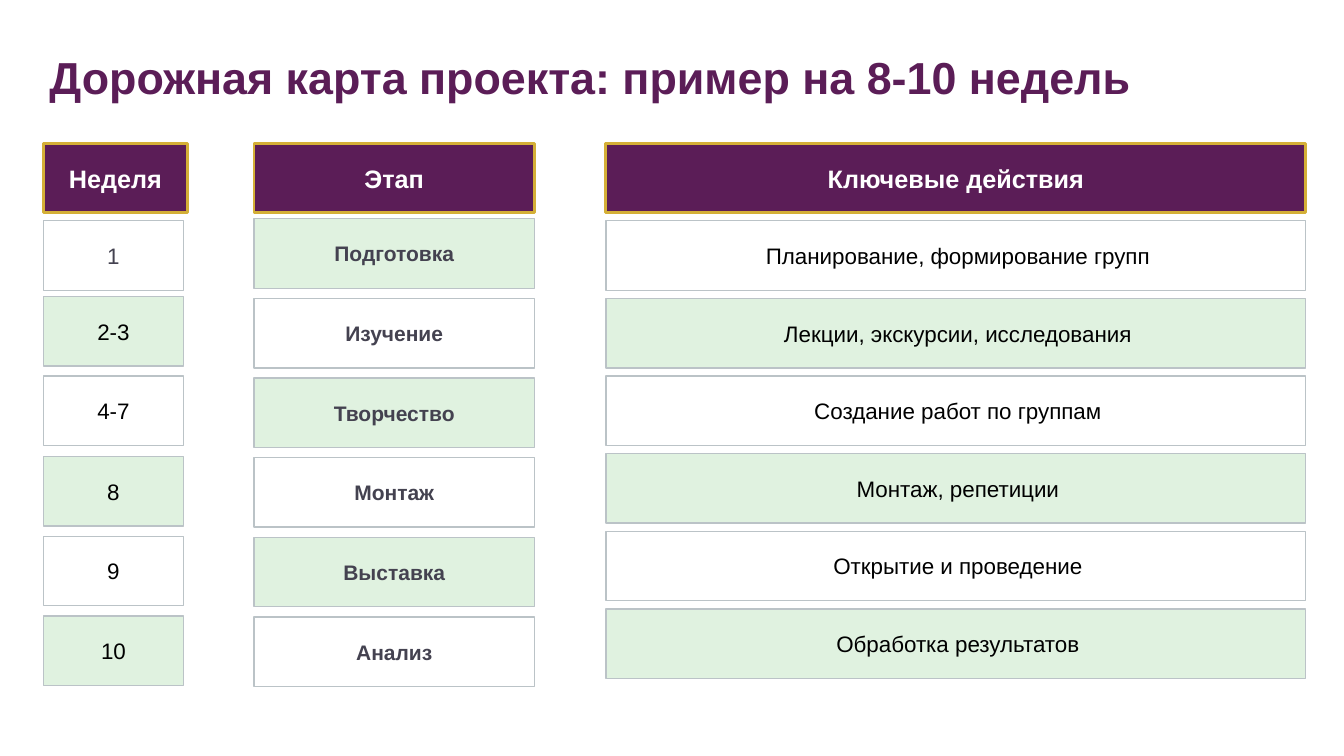
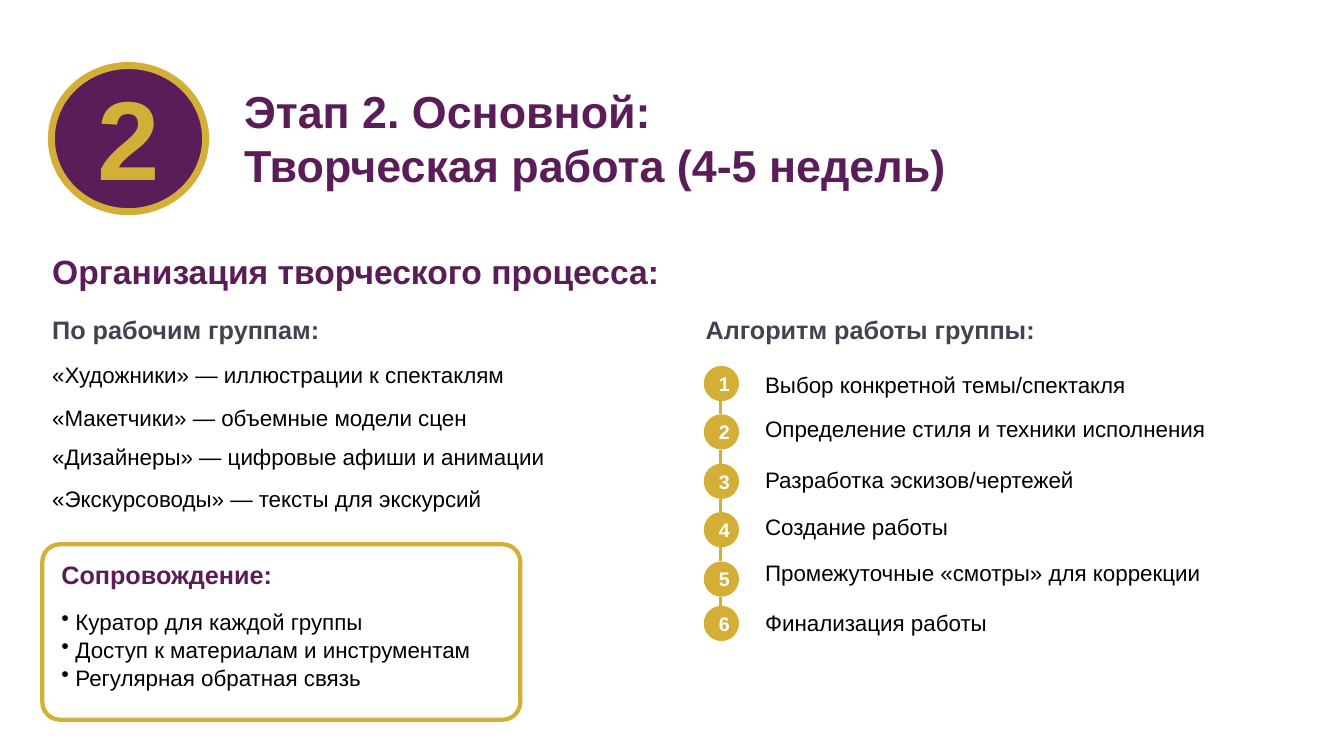
from lxml import etree
from pptx import Presentation
from pptx import util as u
from pptx.dml.color import RGBColor
from pptx.enum import shapes, text
from pptx.oxml.ns import qn

COLORS = {"plum": "5B1D57", "gold": "D4AF37", "mint": "E0F2E0", "white": "FFFFFF",
          "border": "BBC3C7", "slate": "444250", "black": "000000"}
FONT = "Arial"
TOP, MIDDLE = text.MSO_ANCHOR.TOP, text.MSO_ANCHOR.MIDDLE
LEFT, CENTER = text.PP_ALIGN.LEFT, text.PP_ALIGN.CENTER
RECT, OVAL = shapes.MSO_SHAPE.RECTANGLE, shapes.MSO_SHAPE.OVAL


def write(holder, lines, size, color, bold=False, align=LEFT, anchor=TOP):
    """Fill a shape, placeholder or text box with one paragraph per line."""
    frame = holder.text_frame
    frame.word_wrap = True
    frame.auto_size = text.MSO_AUTO_SIZE.NONE
    frame.vertical_anchor = anchor
    for i, line in enumerate(lines):
        paragraph = frame.paragraphs[0] if i == 0 else frame.add_paragraph()
        paragraph.alignment = align
        run = paragraph.add_run()
        run.text = line
        run.font.name = FONT
        run.font.size = u.Pt(size)
        run.font.bold = bold
        run.font.color.rgb = RGBColor.from_string(COLORS[color])
    return frame


def add_panel(parent, kind, area, fill, line=None, width=1):
    """Add a flat filled shape, with an outline if a line colour is given."""
    panel = parent.shapes.add_shape(kind, *[u.Inches(v) for v in area])
    panel.shadow.inherit = False
    panel.fill.solid()
    panel.fill.fore_color.rgb = RGBColor.from_string(COLORS[fill])
    if line:
        panel.line.color.rgb = RGBColor.from_string(COLORS[line])
        panel.line.width = u.Pt(width)
    else:
        panel.line.fill.background()
    return panel


prs = Presentation()
prs.slide_width, prs.slide_height = u.Inches(13.33), u.Inches(7.5)

# Slides with their titles
headings = [
    (["Дорожная карта проекта: пример на 8-10 недель"], (0.39, 0.44, 11.67, 0.64)),
    (["Этап 2. Основной:", "Творческая работа (4-5 недель)"], (2.32, 0.78, 9.17, 1.18)),
]
for lines, area in headings:
    slide = prs.slides.add_slide(prs.slide_layouts[5])
    title = slide.shapes.title
    title.left, title.top, title.width, title.height = [u.Inches(v) for v in area]
    write(title, lines, 32, "plum", bold=True)
roadmap, stage = prs.slides

# Slide 1: roadmap columns; green rows alternate from first_green
CELL_HEIGHT = 0.69
columns = [
    dict(header="Неделя", left=0.43, header_width=1.43, width=1.39, first_green=1,
         tops=[2.19, 2.94, 3.73, 4.53, 5.32, 6.11],
         cells=["1", "2-3", "4-7", "8", "9", "10"],
         size=16, color="black", bold=False, inset=0.1),
    dict(header="Этап", left=2.52, header_width=2.78, width=2.78, first_green=0,
         tops=[2.17 + 0.79 * row for row in range(6)],
         cells=["Подготовка", "Изучение", "Творчество", "Монтаж", "Выставка", "Анализ"],
         size=15, color="slate", bold=True, inset=0.1),
    dict(header="Ключевые действия", left=6.01, header_width=6.94, width=6.94, first_green=1,
         tops=[2.19 + 0.77 * row for row in range(6)],
         cells=["Планирование, формирование групп", "Лекции, экскурсии, исследования",
                "Создание работ по группам", "Монтаж, репетиции",
                "Открытие и проведение", "Обработка результатов"],
         size=16, color="black", bold=False, inset=0.14),
]
for column in columns:
    header = add_panel(roadmap, RECT, (column["left"], 1.42, column["header_width"], CELL_HEIGHT),
                       "plum", "gold", 2)
    write(header, [column["header"]], 18, "white", True, CENTER, MIDDLE)
    for row, (top, label) in enumerate(zip(column["tops"], column["cells"])):
        fill = "mint" if row % 2 == column["first_green"] else "white"
        cell = add_panel(roadmap, RECT, (column["left"], top, column["width"], CELL_HEIGHT),
                         fill, "border")
        color = "slate" if label == "1" else column["color"]
        frame = write(cell, [label], column["size"], color, column["bold"], CENTER, MIDDLE)
        frame.margin_left = u.Inches(column["inset"])

# Slide 2: support card and stage badge
card = add_panel(stage, shapes.MSO_SHAPE.ROUNDED_RECTANGLE, (0.42, 5.4, 4.74, 1.74),
                 "white", "gold", 3)
card.adjustments[0] = 0.1
add_panel(stage, OVAL, (0.51, 0.65, 1.53, 1.45), "plum", "gold", 5)

# Headings, working groups and algorithm steps: area, text, size, colour, bold, align, anchor
labels = [
    ((0.24, 0.62, 2.08, 1.45), "2", 80, "gold", True, CENTER, MIDDLE),
    ((0.42, 2.44, 6.94, 0.5), "Организация творческого процесса:", 24, "plum", True, LEFT, TOP),
    ((0.42, 3.07, 5.56, 0.42), "По рабочим группам:", 18, "slate", True, LEFT, TOP),
    ((6.9, 3.07, 5.56, 0.42), "Алгоритм работы группы:", 18, "slate", True, LEFT, TOP),
    ((0.51, 5.5, 3.38, 0.4), "Сопровождение:", 18, "plum", True, LEFT, TOP),
]
groups = [
    (3.53, "«Художники» — иллюстрации к спектаклям"),
    (3.96, "«Макетчики» — объемные модели сцен"),
    (4.35, "«Дизайнеры» — цифровые афиши и анимации"),
    (4.76, "«Экскурсоводы» — тексты для экскурсий"),
]
steps = [
    (3.63, "Выбор конкретной темы/спектакля"),
    (4.07, "Определение стиля и техники исполнения"),
    (4.57, "Разработка эскизов/чертежей"),
    (5.04, "Создание работы"),
    (5.5, "Промежуточные «смотры» для коррекции"),
    (5.99, "Финализация работы"),
]
labels += [((0.42, top, 5.56, 0.37), group, 16, "black", False, LEFT, TOP)
           for top, group in groups]
labels += [((7.49, top, 4.86, 0.37), step, 16, "black", False, LEFT, MIDDLE)
           for top, step in steps]
for area, label, *style in labels:
    write(stage.shapes.add_textbox(*[u.Inches(v) for v in area]), [label], *style)

# Bulleted support list
support = stage.shapes.add_textbox(u.Inches(0.51), u.Inches(5.97), u.Inches(4.74), u.Inches(0.92))
frame = write(support, ["Куратор для каждой группы", "Доступ к материалам и инструментам",
                        "Регулярная обратная связь"], 16, "black")
for paragraph in frame.paragraphs:
    paragraph.line_spacing = u.Pt(20)
    properties = paragraph._p.get_or_add_pPr()
    properties.set("marL", str(u.Inches(0.14)))
    properties.set("indent", str(u.Inches(-0.14)))
    etree.SubElement(properties, qn("a:buChar")).set("char", "•")

# Chain of numbered steps
DOT = 0.35
dot_tops = [3.63, 4.11, 4.6, 5.08, 5.57, 6.01]
chain = stage.shapes.add_group_shape()
for number, top in enumerate(dot_tops, 1):
    dot = add_panel(chain, OVAL, (6.98, top, DOT, DOT), "gold")
    write(dot, [str(number)], 14, "white", True, CENTER, MIDDLE)
    if number < len(dot_tops):
        link = chain.shapes.add_connector(
            shapes.MSO_CONNECTOR.STRAIGHT, u.Inches(7.15), u.Inches(top + DOT),
            u.Inches(7.15), u.Inches(dot_tops[number]))
        link.line.color.rgb = RGBColor.from_string(COLORS["gold"])
        link.line.width = u.Pt(2)
        etree.SubElement(link._element.spPr, qn("a:effectLst"))

prs.save("out.pptx")
